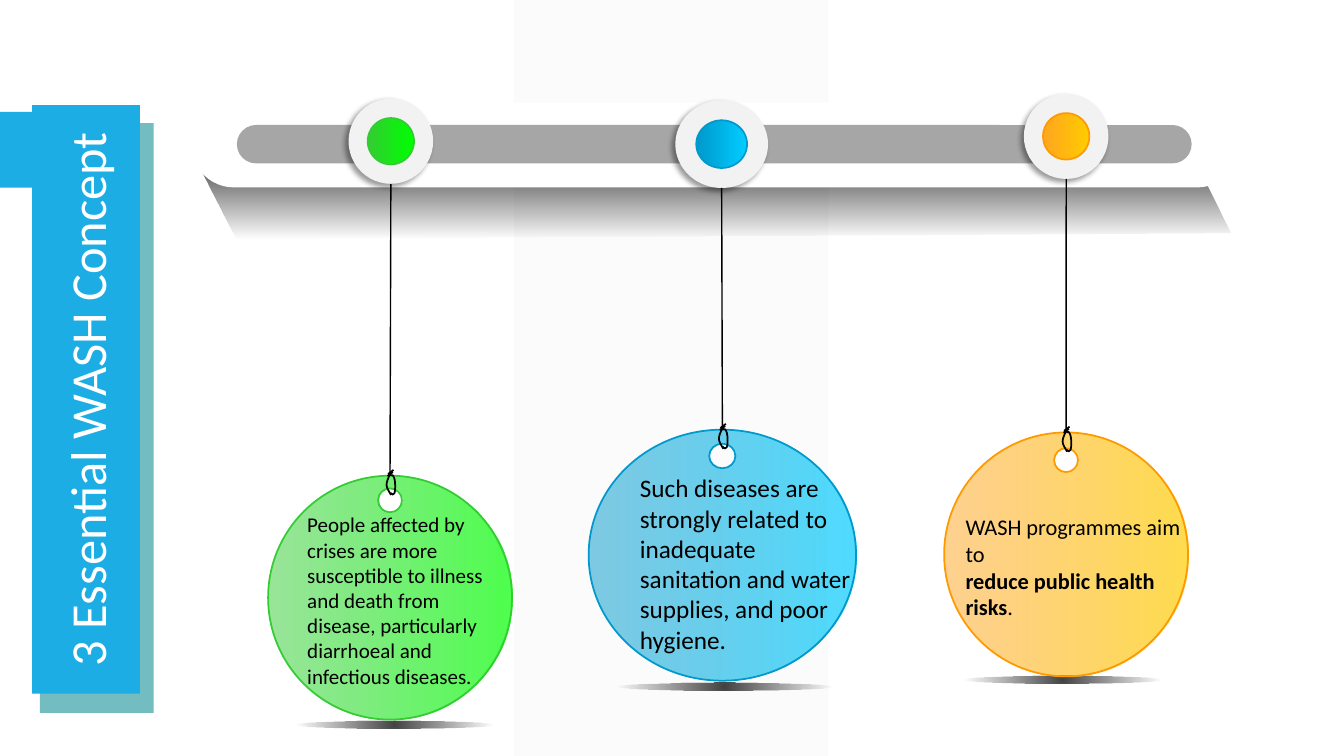
from dataclasses import dataclass

from pptx import Presentation
from pptx.dml.color import RGBColor
from pptx.enum.shapes import MSO_CONNECTOR, MSO_SHAPE
from pptx.enum.text import MSO_ANCHOR, MSO_AUTO_SIZE, PP_ALIGN
from pptx.oxml import parse_xml
from pptx.oxml.ns import nsdecls
from pptx.util import Pt


@dataclass(frozen=True)
class Theme:
    font: str = "Calibri"
    title_size: int = 36
    black: str = "000000"
    white: str = "FFFFFF"
    accent: str = "1CADE4"
    teal: str = "1E9399"
    bar: str = "A6A6A6"
    pale: str = "F2F2F2"
    # (disc start, end, outline)
    green: tuple = ("33CC33", "00FF00", "33CC33")
    blue: tuple = ("0099CC", "00CCFF", "0099CC")
    orange: tuple = ("FFA51F", "FFCC00", "FF9900")


T = Theme()

# Knot strokes as Bezier control points, relative to the top of a disc
KNOT_CURVES = [
    [(0.7, 13.7), (-0.7, 11.2), (-2.5, 8.7), (-2.5, 6.5),
     (-2.5, 4.3), (-1.2, 1.5), (0, -1)],
    [(0, -0.5), (1.7, -1.2), (2.5, 0), (3.2, 2.2), (3.9, 4.5),
     (3.9, 11), (3.2, 12.5), (2.6, 14.2), (1.2, 13.5), (0.4, 12.3)],
]
KNOT_TICKS = [[(-1.8, 0.2), (2, -2.6)], [(-1.4, -1.2), (2.5, -4.1)]]


# Drawing helpers
def set_line(sp, color=None, width=1.25):
    if color:
        sp.line.color.rgb = RGBColor.from_string(color)
        sp.line.width = Pt(width)
    else:
        sp.line.fill.background()


def set_fill(sp, color, alpha=100):
    sp.fill.solid()
    sp.fill.fore_color.rgb = RGBColor.from_string(color)
    if alpha < 100:
        clr = sp._element.spPr.find(".//{*}solidFill/{*}srgbClr")
        clr.append(parse_xml(f'<a:alpha {nsdecls("a")} val="{alpha * 1000}"/>'))


def set_gradient(sp, start, end, alphas=(100, 100), angle=None):
    """Linear at the given angle, or circular from the centre without one."""
    stops = "".join(
        f'<a:gs pos="{pos}"><a:srgbClr val="{c}"><a:alpha val="{a * 1000}"/></a:srgbClr></a:gs>'
        for pos, c, a in zip((0, 100000), (start, end), alphas))
    if angle is None:
        way = ('<a:path path="circle"><a:fillToRect l="50000" t="50000" '
               'r="50000" b="50000"/></a:path>')
    else:
        way = f'<a:lin ang="{angle * 60000}" scaled="0"/>'
    sp.fill.background()
    spPr = sp._element.spPr
    spPr.replace(spPr.find("{*}noFill"), parse_xml(
        f'<a:gradFill {nsdecls("a")} rotWithShape="1"><a:gsLst>{stops}</a:gsLst>{way}</a:gradFill>'))


def add_shape(s, kind, x, y, w, h, fill=None, alpha=100):
    sp = s.shapes.add_shape(kind, Pt(x), Pt(y), Pt(w), Pt(h))
    sp.shadow.inherit = False
    set_line(sp)
    if fill:
        set_fill(sp, fill, alpha)
    return sp


def add_outline(s, contours, close=True, curved=False):
    """Outline through points; if curved, each three points form a Bezier segment."""
    (x, y), *_ = contours[0]
    fb = s.shapes.build_freeform(Pt(x), Pt(y), 1)
    for i, pts in enumerate(contours):
        if i:
            fb.move_to(Pt(pts[0][0]), Pt(pts[0][1]))
        fb.add_line_segments([(Pt(px), Pt(py)) for px, py in pts[1:]], close=close)
    sp = fb.convert_to_shape()
    sp.shadow.inherit = False
    if curved:
        lines = sp._element.spPr.findall(".//{*}lnTo")
        for k in range(0, len(lines), 3):
            curve = parse_xml(f'<a:cubicBezTo {nsdecls("a")}/>')
            lines[k].addprevious(curve)
            for ln in lines[k:k + 3]:
                curve.append(ln[0])
                ln.getparent().remove(ln)
    return sp


def ellipse_points(cx, cy, rx, ry, turn=1):
    k = 0.5523
    unit = [(0, -1), (k, -1), (1, -k), (1, 0), (1, k), (k, 1), (0, 1),
            (-k, 1), (-1, k), (-1, 0), (-1, -k), (-k, -1), (0, -1)]
    return [(cx + turn * rx * ux, cy + ry * uy) for ux, uy in unit]


def add_run(p, text, size, color, bold=False):
    r = p.add_run()
    r.text = text
    r.font.name, r.font.size, r.font.bold = T.font, Pt(size), bold
    r.font.color.rgb = RGBColor.from_string(color)


# Background band and left tab
def add_backdrop(s):
    add_shape(s, MSO_SHAPE.RECTANGLE, 367.2, 0, 224.6, 540, T.pale, 30)
    add_shape(s, MSO_SHAPE.RECTANGLE, 0, 80, 81.4, 54, T.accent)


# Title turned upwards, with its offset panel
def add_title(s, x, y, w, h):
    add_shape(s, MSO_SHAPE.RECTANGLE, x + 5.5, y + 13, w + 4.3, h + 0.7, T.teal, 62)
    title = s.shapes.title
    title.left, title.top = Pt(x + (w - h) / 2), Pt(y + (h - w) / 2)
    title.width, title.height = Pt(h), Pt(w)
    title.rotation = 270
    set_fill(title, T.accent)
    tf = title.text_frame
    tf.auto_size = MSO_AUTO_SIZE.NONE
    tf.vertical_anchor = MSO_ANCHOR.MIDDLE
    p = tf.paragraphs[0]
    p.alignment = PP_ALIGN.CENTER
    add_run(p, "3 Essential WASH Concept", T.title_size, T.white)
    s.shapes._spTree.append(title._element)


# Rail with its cast shadow
def add_rail(s, x, y, w, h):
    cast = add_outline(s, [[(x, y + 81.3), (x - 30, y + 23), (x + 689, y + 34.5),
                            (x + 710, y + 77), (x, y + 81.3)]])
    set_line(cast)
    set_gradient(cast, T.black, T.black, (74, 0), 90)
    for dx, dy, dw, dh, color in ((-32.4, -15.9, 66.8, 33.1, T.white), (0, 0, 0, 0, T.bar)):
        sp = add_shape(s, MSO_SHAPE.ROUNDED_RECTANGLE, x + dx, y + dy, w + dw, h + dh, color)
        sp.adjustments[0] = 0.5


# Disc hanging on a string from a hub on the rail
def add_pendant(s, box, hub_at, hole, ground_shift, colors, text_box, size, runs):
    x, y, w, h = box
    hub_x, hub_y = hub_at
    start, end, outline = colors
    cx = x + w / 2
    hub_w, hub_h, dot_w, dot_h = 0.347 * w, 0.349 * h, 0.19 * w, 0.19 * h

    ground_w = 0.81 * w
    ground = add_shape(s, MSO_SHAPE.OVAL, cx - ground_w / 2 + ground_shift[0],
                       y + h + ground_shift[1], ground_w, 5.8)
    set_gradient(ground, T.black, T.black, (74, 0))

    disc = add_outline(s, [
        ellipse_points(cx, y + hole, 0.049 * w, 0.049 * h, -1),
        ellipse_points(cx, y + h / 2, w / 2, h / 2)], curved=True)
    set_gradient(disc, start, end, (50, 70), 0)
    set_line(disc, outline)

    hub = add_shape(s, MSO_SHAPE.OVAL, hub_x - hub_w / 2, hub_y, hub_w, hub_h, T.pale)
    hub._element.spPr.find("{*}effectLst").append(parse_xml(
        f'<a:outerShdw {nsdecls("a")} blurRad="{Pt(4)}" dist="{Pt(3)}" dir="{135 * 60000}" '
        f'algn="ctr" rotWithShape="0"><a:srgbClr val="{T.black}"><a:alpha val="40000"/>'
        '</a:srgbClr></a:outerShdw>'))
    dot = add_shape(s, MSO_SHAPE.OVAL, hub_x - dot_w / 2, hub_y + (hub_h - dot_h) / 2,
                    dot_w, dot_h)
    set_gradient(dot, start, end, angle=0)
    set_line(dot, outline)

    string = s.shapes.add_connector(MSO_CONNECTOR.STRAIGHT, Pt(hub_x), Pt(hub_y + hub_h),
                                    Pt(cx), Pt(y))
    set_line(string, T.black, 1)
    string._element.spPr.append(parse_xml(f'<a:effectLst {nsdecls("a")}/>'))
    for stroke in KNOT_CURVES + KNOT_TICKS:
        knot = add_outline(s, [[(cx + px, y + py) for px, py in stroke]],
                           close=False, curved=stroke in KNOT_CURVES)
        knot.fill.background()
        set_line(knot, T.black)

    dx, dy, tw, th = text_box
    tf = s.shapes.add_textbox(Pt(x + dx), Pt(y + dy), Pt(tw), Pt(th)).text_frame
    tf.word_wrap = True
    p = tf.paragraphs[0]
    for i, (text, bold) in enumerate(runs):
        if i == 1:
            p.add_line_break()
        add_run(p, text, size, T.black, bold)


def main():
    prs = Presentation()
    prs.slide_width, prs.slide_height = Pt(960), Pt(540)
    s = prs.slides.add_slide(prs.slide_layouts[5])
    add_backdrop(s)
    add_rail(s, 169.2, 89.3, 682, 27.4)
    add_pendant(s, (674.4, 308.9, 174.2, 174.2), (761.6, 67), 19.8, (-2.5, -0.7), T.orange,
                (8.2, 54, 175, 85), 16,
                [("WASH programmes aim to", False), ("reduce public health risks", True),
                 (".", False)])
    add_pendant(s, (191.5, 339.8, 174.2, 174.2), (279.2, 70.5), 17.6, (3, 0.6), T.green,
                (20.9, 22.3, 155.5, 134.6), 15,
                [("People affected by crises are more susceptible to illness and death from "
                  "disease, particularly diarrhoeal and infectious diseases.", False)])
    add_pendant(s, (420.5, 306.9, 191, 179.3), (515.5, 71.7), 18.8, (1.5, 1.3), T.blue,
                (29.5, 27.2, 172, 138.2), 18,
                [("Such diseases are strongly related to inadequate sanitation and water "
                  "supplies, and poor hygiene.", False)])
    add_title(s, 23, 75, 77, 420.5)
    prs.save("out.pptx")


if __name__ == "__main__":
    main()
